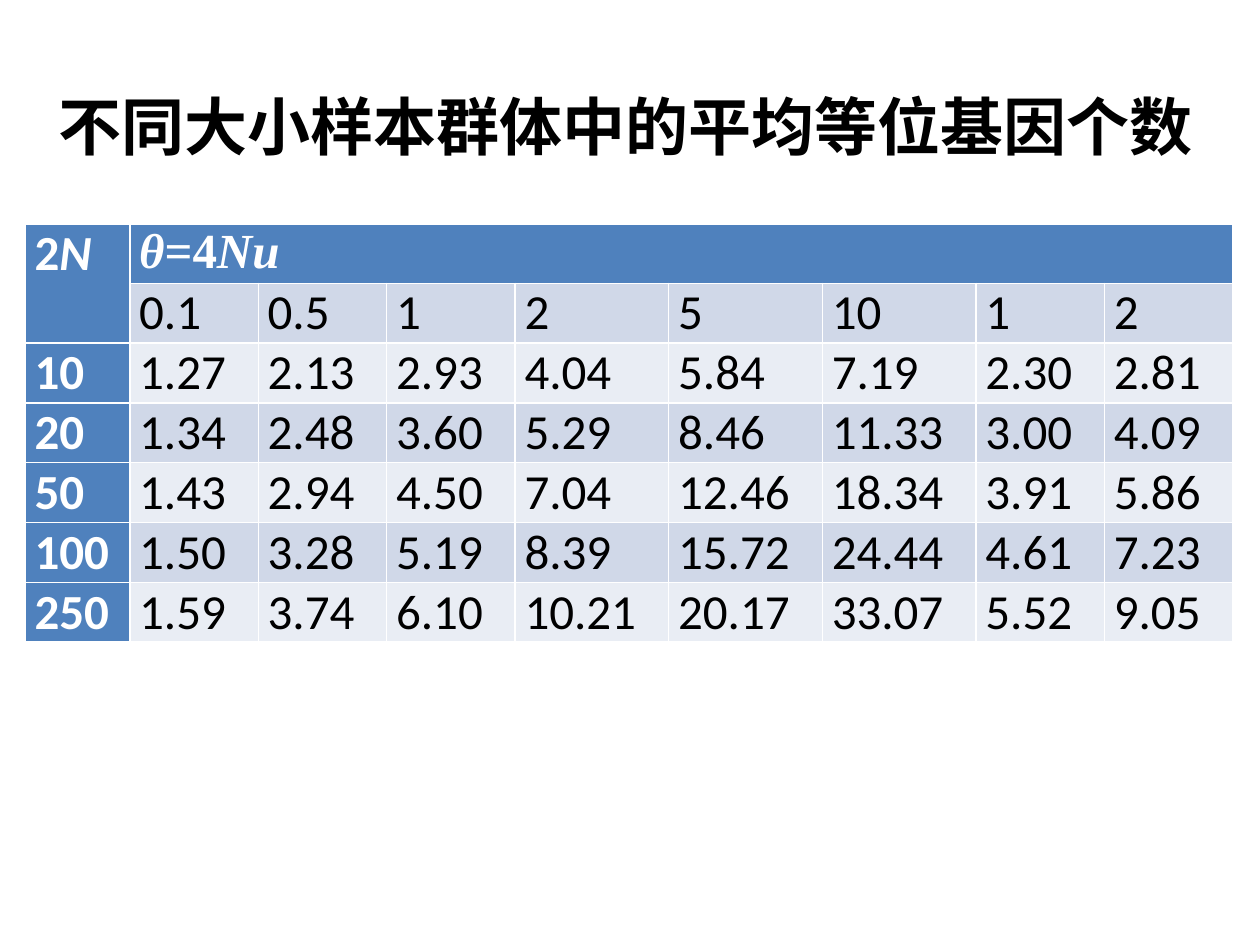
"""Build a slide with a table of mean allele counts by sample size."""
from pptx import Presentation
from pptx.dml.color import RGBColor
from pptx.enum.text import MSO_ANCHOR, PP_ALIGN
from pptx.oxml.ns import qn
from pptx.util import Pt
from lxml import etree

MIDDLE = MSO_ANCHOR.MIDDLE
CENTER = PP_ALIGN.CENTER
BLACK = RGBColor(0x00, 0x00, 0x00)
WHITE = RGBColor(0xFF, 0xFF, 0xFF)
BLUE = RGBColor(0x4F, 0x81, 0xBD)
DARK = RGBColor(0xD0, 0xD8, 0xE8)
LIGHT = RGBColor(0xE9, 0xED, 0xF4)
SANS, SERIF, HAN = "Calibri", "Times New Roman", "Noto Sans CJK SC"

TITLE = "不同大小样本群体中的平均等位基因个数"
SIZE_HEAD = [("2", SANS, False), ("N", SANS, True)]
THETA_HEAD = [("θ", SERIF, True), ("=4", SERIF, False), ("Nu", SERIF, True)]
ROWS = [
    ["", "0.1", "0.5", "1", "2", "5", "10", "1", "2"],
    ["10", "1.27", "2.13", "2.93", "4.04", "5.84", "7.19", "2.30", "2.81"],
    ["20", "1.34", "2.48", "3.60", "5.29", "8.46", "11.33", "3.00", "4.09"],
    ["50", "1.43", "2.94", "4.50", "7.04", "12.46", "18.34", "3.91", "5.86"],
    ["100", "1.50", "3.28", "5.19", "8.39", "15.72", "24.44", "4.61", "7.23"],
    ["250", "1.59", "3.74", "6.10", "10.21", "20.17", "33.07", "5.52", "9.05"],
]
NARROW, WIDE = 73.4, 87.8
WIDTHS = [59.8] + [NARROW] * 3 + [WIDE] * 3 + [NARROW] * 2
HEIGHTS = [30.5] + [34.2] * len(ROWS)


def style(run, font, size, color, bold, italic=False):
    run.font.name = font
    run.font.size = Pt(size)
    run.font.color.rgb = color
    run.font.bold = bold
    run.font.italic = italic


def add_title(slide):
    box = slide.shapes.add_textbox(Pt(20.2), Pt(43.2), Pt(674.6), Pt(56.9))
    frame = box.text_frame
    frame.word_wrap = True
    frame.vertical_anchor = MIDDLE
    frame.text = TITLE
    line = frame.paragraphs[0]
    line.alignment = CENTER
    run = line.runs[0]
    style(run, HAN, 36, BLACK, True)
    east = etree.SubElement(run.font._element, qn("a:ea"))
    east.set("typeface", HAN)


def fill_cell(cell, parts, fill, color, bold):
    cell.margin_left = cell.margin_right = Pt(5.4)
    cell.margin_top = cell.margin_bottom = Pt(0)
    cell.fill.solid()
    cell.fill.fore_color.rgb = fill
    line = cell.text_frame.paragraphs[0]
    for text, font, italic in parts:
        run = line.add_run()
        run.text = text
        style(run, font, 28, color, bold, italic)


def add_grid(slide):
    frame = slide.shapes.add_table(
        len(HEIGHTS), len(WIDTHS), Pt(14.4), Pt(128.2),
        Pt(sum(WIDTHS)), Pt(sum(HEIGHTS)))
    table = frame.table
    table.first_col = True
    for col, width in zip(table.columns, WIDTHS):
        col.width = Pt(width)
    for row, height in zip(table.rows, HEIGHTS):
        row.height = Pt(height)
    table.cell(0, 0).merge(table.cell(1, 0))
    table.cell(0, 1).merge(table.cell(0, len(WIDTHS) - 1))
    fill_cell(table.cell(0, 0), SIZE_HEAD, BLUE, WHITE, True)
    fill_cell(table.cell(0, 1), THETA_HEAD, BLUE, WHITE, True)
    for r, row in enumerate(ROWS, 1):
        band = DARK if r % 2 else LIGHT
        for c, text in enumerate(row):
            if text:
                head = c == 0
                fill_cell(table.cell(r, c), [(text, SANS, False)],
                          BLUE if head else band,
                          WHITE if head else BLACK, head)


def main():
    deck = Presentation()
    deck.slide_width, deck.slide_height = Pt(720), Pt(540)
    slide = deck.slides.add_slide(deck.slide_layouts[6])
    add_title(slide)
    add_grid(slide)
    deck.save("out.pptx")


if __name__ == "__main__":
    main()
